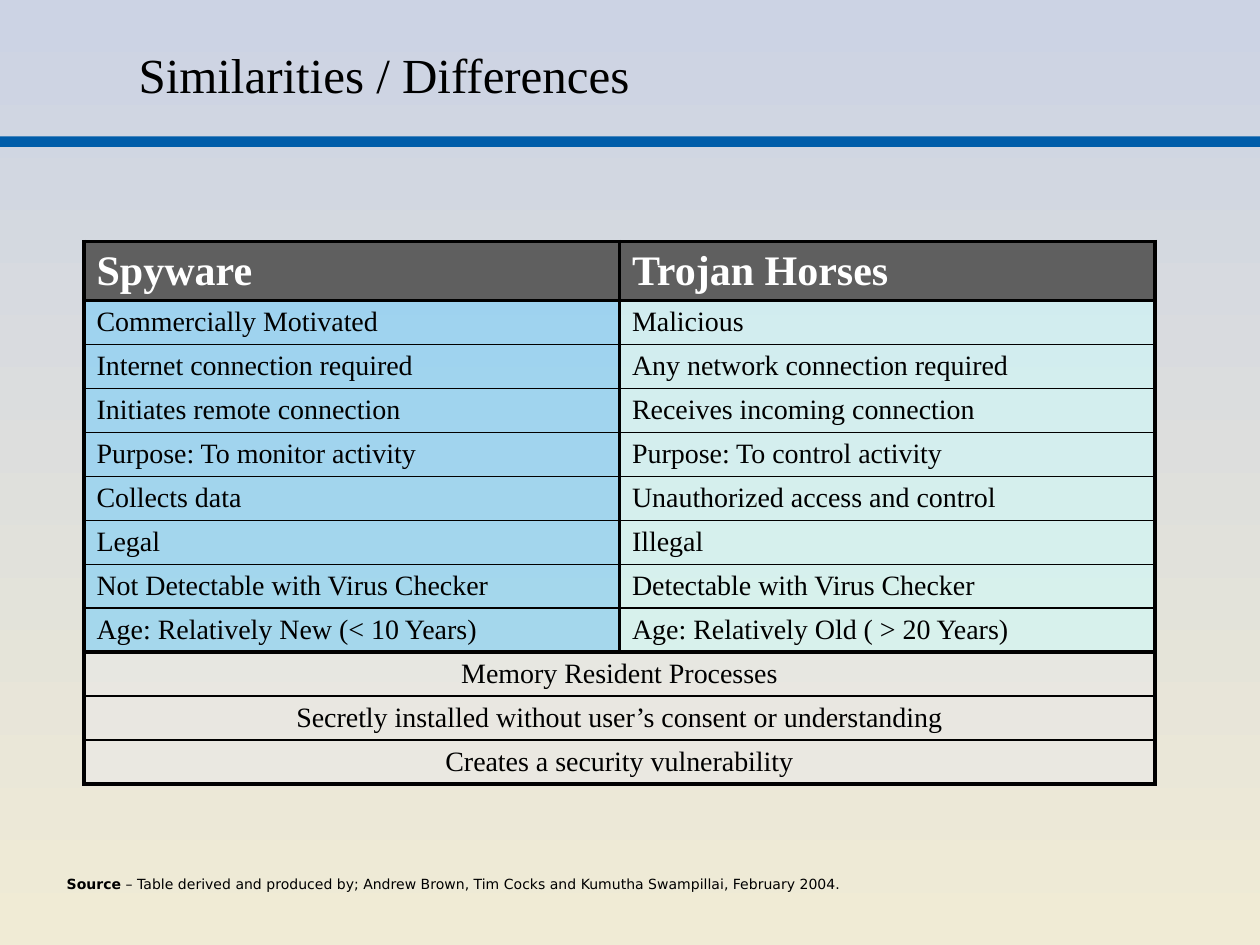
from lxml import etree
from pptx import Presentation
from pptx.dml.color import RGBColor
from pptx.enum.shapes import MSO_SHAPE
from pptx.enum.text import MSO_ANCHOR, PP_ALIGN
from pptx.oxml.ns import qn
from pptx.util import Pt

RECT = MSO_SHAPE.RECTANGLE
MIDDLE = MSO_ANCHOR.MIDDLE
LEFT, CENTER = PP_ALIGN.LEFT, PP_ALIGN.CENTER

BLACK = RGBColor(0x00, 0x00, 0x00)
WHITE = RGBColor(0xFF, 0xFF, 0xFF)
BLUE = RGBColor(0x00, 0x5D, 0xAA)
GRAY = RGBColor(0x5F, 0x5F, 0x5F)
SKY = RGBColor(0x66, 0xCC, 0xFF)
MINT = RGBColor(0xCC, 0xFF, 0xFF)
PALE = RGBColor(0xEA, 0xEA, 0xEA)
DUSK = RGBColor(0xCC, 0xD3, 0xE4)
SAND = RGBColor(0xF0, 0xEB, 0xD5)

SERIF, SANS = "Times New Roman", "DejaVu Sans"
TITLE = {"name": SERIF, "size": Pt(28), "bold": False}
HEAD = {"name": SERIF, "size": Pt(24), "bold": True}
BODY = {"name": SERIF, "size": Pt(16), "bold": False}
NOTE = {"name": SANS, "size": Pt(8), "bold": False}
THICK, THIN = Pt(2.25), Pt(1)

HEADS = ("Spyware", "Trojan Horses")
PAIRS = [
    ("Commercially Motivated", "Malicious"),
    ("Internet connection required", "Any network connection required"),
    ("Initiates remote connection", "Receives incoming connection"),
    ("Purpose: To monitor activity", "Purpose: To control activity"),
    ("Collects data", "Unauthorized access and control"),
    ("Legal", "Illegal"),
    ("Not Detectable with Virus Checker", "Detectable with Virus Checker"),
    ("Age: Relatively New (< 10 Years)", "Age: Relatively Old ( > 20 Years)"),
]
SHARED = [
    "Memory Resident Processes",
    "Secretly installed without user’s consent or understanding",
    "Creates a security vulnerability",
]


def put_run(para, text, form, color=BLACK):
    run = para.add_run()
    run.text = text
    for key, value in form.items():
        setattr(run.font, key, value)
    run.font.color.rgb = color
    return run


def place(shape, box):
    for key, value in zip(("left", "top", "width", "height"), box):
        setattr(shape, key, Pt(value))


def paint(cell, color, alpha=None):
    cell.fill.solid()
    cell.fill.fore_color.rgb = color
    if alpha:
        tone = cell._tc.tcPr.find(".//" + qn("a:srgbClr"))
        etree.SubElement(tone, qn("a:alpha"), val=str(alpha * 1000))


def edge(cell, top, bottom):
    props = cell._tc.get_or_add_tcPr()
    sides = {"L": THICK, "R": THICK, "T": top, "B": bottom}
    for spot, (side, width) in enumerate(sides.items()):
        line = etree.Element(qn("a:ln" + side), w=str(int(width)))
        fill = etree.SubElement(line, qn("a:solidFill"))
        etree.SubElement(fill, qn("a:srgbClr"), val=str(BLACK))
        props.insert(spot, line)


def add_title(slide, box):
    title = slide.shapes.title
    place(title, box)
    frame = title.text_frame
    frame.vertical_anchor = MIDDLE
    para = frame.paragraphs[0]
    para.alignment = LEFT
    put_run(para, "Similarities / Differences", TITLE)


def add_bar(slide, box):
    bar = slide.shapes.add_shape(RECT, *map(Pt, box))
    bar.shadow.inherit = False
    bar.fill.solid()
    bar.fill.fore_color.rgb = BLUE
    bar.line.fill.background()


def add_grid(slide, box):
    rows = [HEADS, *PAIRS, *((text,) for text in SHARED)]
    count = len(rows)
    table = slide.shapes.add_table(count, 2, *map(Pt, box)).table
    table.first_row = table.horz_banding = False
    for col in table.columns:
        col.width = Pt(box[2] / 2)
    first = 33.5
    step = (box[3] - first) / (count - 1)
    heavy = {0, 1, len(PAIRS) + 1, count}
    for r, texts in enumerate(rows):
        table.rows[r].height = Pt(step if r else first)
        joint = len(texts) == 1
        if joint:
            table.cell(r, 0).merge(table.cell(r, 1))
        top, bottom = (THICK if n in heavy else THIN for n in (r, r + 1))
        for c in range(2):
            cell = table.cell(r, c)
            if r == 0:
                paint(cell, GRAY)
            else:
                paint(cell, PALE if joint else (SKY, MINT)[c], 50)
            edge(cell, top, bottom)
        for c, text in enumerate(texts):
            para = table.cell(r, c).text_frame.paragraphs[0]
            para.alignment = CENTER if joint else LEFT
            put_run(para, text, BODY if r else HEAD, BLACK if r else WHITE)


def add_source(slide, box):
    frame = slide.shapes.add_textbox(*map(Pt, box)).text_frame
    frame.word_wrap = True
    para = frame.paragraphs[0]
    put_run(para, "Source", NOTE | {"bold": True})
    put_run(para, " – Table derived and produced by; Andrew Brown, Tim Cocks "
                  "and Kumutha Swampillai, February 2004.", NOTE)


def main():
    deck = Presentation()
    deck.slide_width, deck.slide_height = Pt(720), Pt(540)
    slide = deck.slides.add_slide(deck.slide_layouts[5])
    back = slide.background.fill
    back.gradient()
    back.gradient_angle = 270
    for stop, color in zip(back.gradient_stops, (DUSK, SAND)):
        stop.color.rgb = color
    add_bar(slide, (0, 78, 720, 6))
    add_title(slide, (72, 12, 612, 60))
    add_grid(slide, (48, 138, 612, 310))
    add_source(slide, (31, 497, 641, 16.5))
    deck.save("out.pptx")


if __name__ == "__main__":
    main()
